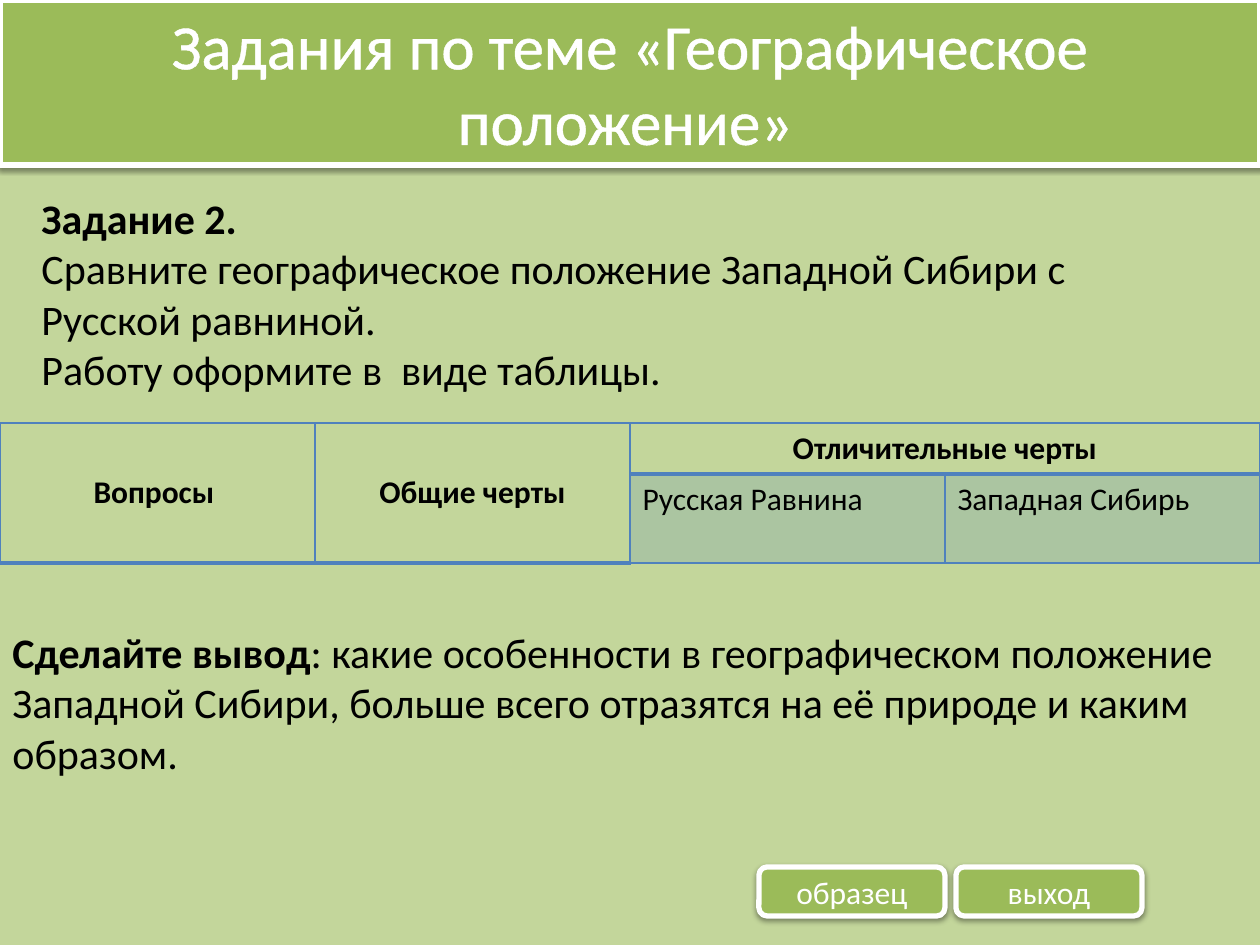
"""Build the slide with the second task on the geographical position of Western Siberia."""
from lxml.etree import SubElement
from pptx import Presentation
from pptx.dml.color import RGBColor
from pptx.enum.shapes import MSO_SHAPE
from pptx.enum.text import MSO_ANCHOR, MSO_AUTO_SIZE, PP_ALIGN
from pptx.oxml import parse_xml
from pptx.oxml.ns import qn
from pptx.util import Pt

PX = 7257.6
FONT = "Calibri"
NS = 'xmlns:a="http://schemas.openxmlformats.org/drawingml/2006/main"'
PALE_GREEN = RGBColor(0xC3, 0xD6, 0x9B)
GREEN = RGBColor(0x9B, 0xBB, 0x59)
BLUE = RGBColor(0x4F, 0x81, 0xBD)
WHITE = RGBColor(0xFF, 0xFF, 0xFF)
BLACK = RGBColor(0, 0, 0)

TITLE = [("Задания по теме «Географическое положение»", 36), (" ", 24)]
TITLE_BOX = (0, 0, 1260, 165)
TEXTS = [
    ((29, 186, 1191, 217), [
        [("Задание 2.", True)],
        [("Сравните географическое положение Западной Сибири с Русской равниной.", False)],
        [("Работу оформите в  виде таблицы.", False)],
    ]),
    ((0, 620, 1231, 217), [
        [("Сделайте вывод", True), (": какие особенности в географическом положение", False)],
        [("Западной Сибири, больше всего отразятся на её природе и каким образом.", False)],
    ]),
]
TABLE_BOX = (0, 423, 1260, 140)
ROW_HEIGHTS = (51, 89)
HEADERS = [("Вопросы ", (0, 0), (1, 0)), ("Общие черты", (0, 1), (1, 1)),
           ("Отличительные черты", (0, 2), (0, 3))]
REGIONS = [("Русская Равнина", (1, 2)), ("Западная Сибирь", (1, 3))]
BUTTONS = ["образец", "выход"]
BUTTON_BOX = (759, 867, 186, 49)
BUTTON_STEP = 197


def emu(*lengths):
    return [round(length * PX) for length in lengths]


def add_run(paragraph, words, size, color, bold=False):
    run = paragraph.add_run()
    run.text = words
    run.font.name = FONT
    run.font.size = Pt(size)
    run.font.bold = bold
    run.font.color.rgb = color
    return run


def style_panel(panel):
    panel.fill.solid()
    panel.fill.fore_color.rgb = GREEN
    panel.line.color.rgb = WHITE
    panel.line.width = Pt(3)
    panel._element.spPr.append(parse_xml(
        f'<a:effectLst {NS}><a:outerShdw blurRad="40000" dist="20000" dir="5400000" '
        'rotWithShape="0"><a:srgbClr val="000000"><a:alpha val="38000"/></a:srgbClr>'
        '</a:outerShdw></a:effectLst>'))


def line_xml(tag, color, width):
    return parse_xml(f'<a:{tag} {NS} w="{Pt(width)}"><a:solidFill>'
                     f'<a:srgbClr val="{color}"/></a:solidFill></a:{tag}>')


def add_title(slide):
    title = slide.shapes.title
    title.left, title.top, title.width, title.height = emu(*TITLE_BOX)
    style_panel(title)
    frame = title.text_frame
    frame.word_wrap = True
    frame.auto_size = MSO_AUTO_SIZE.NONE
    frame.vertical_anchor = MSO_ANCHOR.TOP
    paragraph = frame.paragraphs[0]
    paragraph.alignment = PP_ALIGN.CENTER
    for words, size in TITLE:
        run = add_run(paragraph, words, size, WHITE)
        run.font._element.insert(0, line_xml("ln", WHITE, 1.45))


def add_text(slide, box, paragraphs):
    frame = slide.shapes.add_textbox(*emu(*box)).text_frame
    frame.word_wrap = True
    for index, runs in enumerate(paragraphs):
        paragraph = frame.add_paragraph() if index else frame.paragraphs[0]
        for words, bold in runs:
            add_run(paragraph, words, 24, BLACK, bold)


def border_cell(cell, bottom):
    properties = cell._tc.get_or_add_tcPr()
    for tag, width in (("lnL", 1), ("lnR", 1), ("lnT", 1), ("lnB", bottom)):
        properties.append(line_xml(tag, BLUE, width))


def add_comparison(slide):
    table = slide.shapes.add_table(2, 4, *emu(*TABLE_BOX)).table
    table.first_row = table.horz_banding = False
    for row, height in zip(table.rows, ROW_HEIGHTS):
        row.height = emu(height)[0]
    for words, first, last in HEADERS:
        cell = table.cell(*first)
        cell.merge(table.cell(*last))
        cell.vertical_anchor = MSO_ANCHOR.MIDDLE
        cell.text_frame.paragraphs[0].alignment = PP_ALIGN.CENTER
        add_run(cell.text_frame.paragraphs[0], words, 18, BLACK, True)
        for position in {first, last}:
            border_cell(table.cell(*position), 2)
            table.cell(*position).fill.background()
    for words, position in REGIONS:
        cell = table.cell(*position)
        add_run(cell.text_frame.paragraphs[0], words, 18, BLACK)
        border_cell(cell, 1)
        cell.fill.solid()
        cell.fill.fore_color.rgb = BLUE
        tint = cell._tc.tcPr.find(qn("a:solidFill")).find(qn("a:srgbClr"))
        SubElement(tint, qn("a:alpha")).set("val", "20000")


def add_button(slide, index, words):
    left, top, width, height = BUTTON_BOX
    button = slide.shapes.add_shape(MSO_SHAPE.ROUNDED_RECTANGLE,
                                    *emu(left + index * BUTTON_STEP, top, width, height))
    style_panel(button)
    button.text_frame.vertical_anchor = MSO_ANCHOR.MIDDLE
    paragraph = button.text_frame.paragraphs[0]
    paragraph.alignment = PP_ALIGN.CENTER
    add_run(paragraph, words, 18, WHITE)


def main():
    deck = Presentation()
    deck.slide_width, deck.slide_height = emu(1260, 945)
    slide = deck.slides.add_slide(deck.slide_layouts[5])
    slide.background.fill.solid()
    slide.background.fill.fore_color.rgb = PALE_GREEN
    add_title(slide)
    for box, paragraphs in TEXTS:
        add_text(slide, box, paragraphs)
    add_comparison(slide)
    for index, words in enumerate(BUTTONS):
        add_button(slide, index, words)
    deck.save("out.pptx")


if __name__ == "__main__":
    main()
